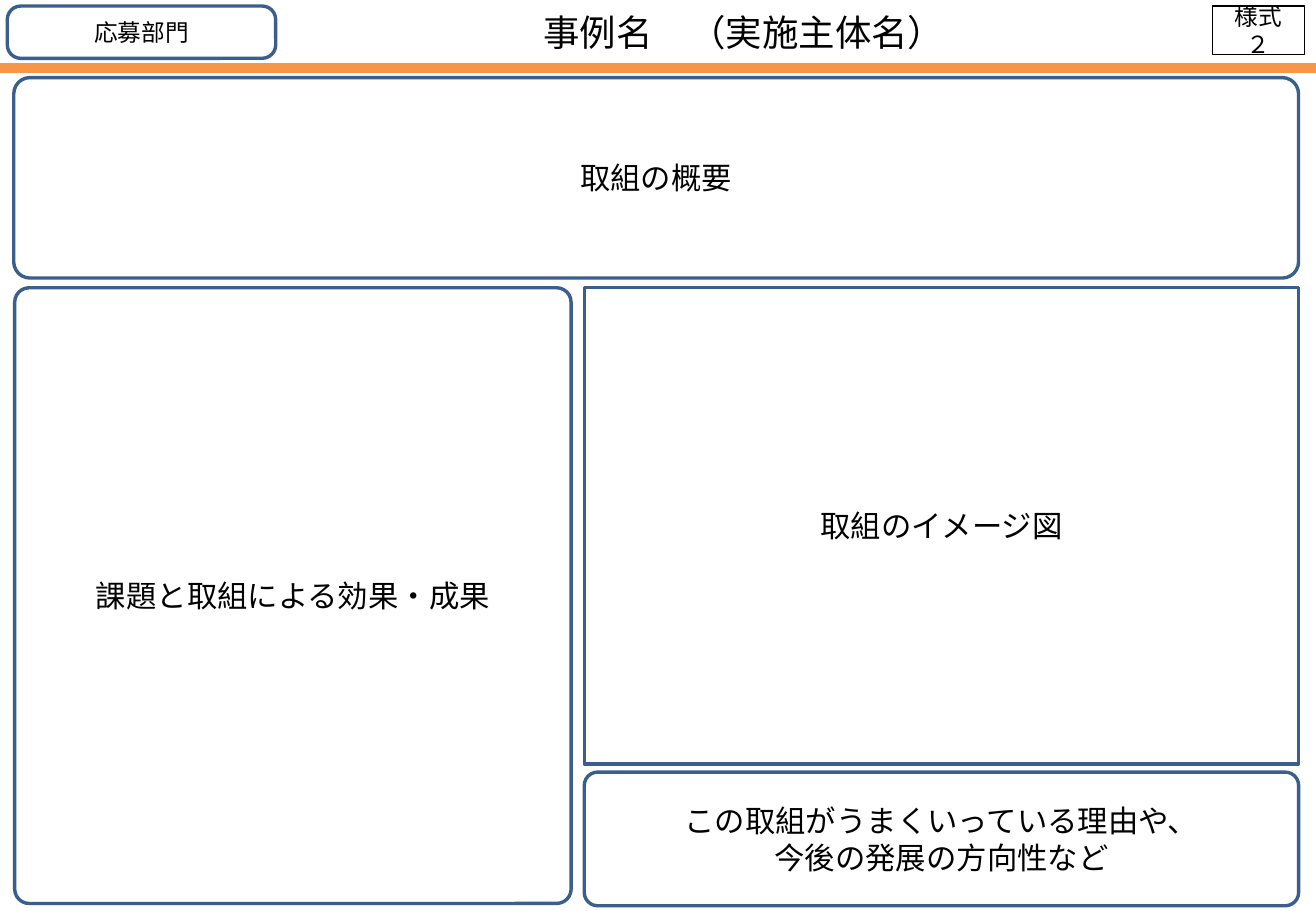
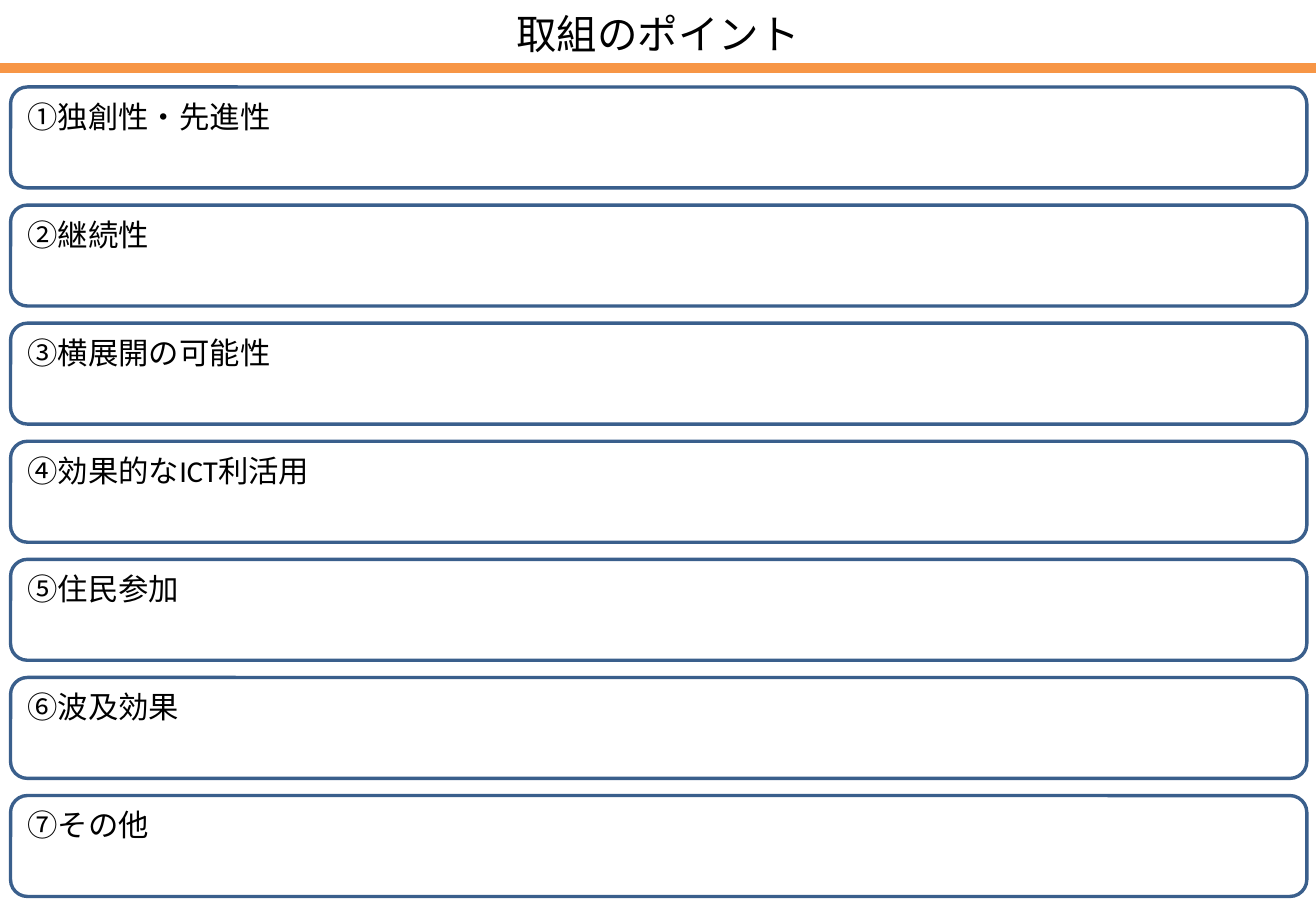
from pptx import Presentation
from pptx.dml.color import RGBColor
from pptx.enum.shapes import MSO_SHAPE as Preset
from pptx.enum.text import MSO_ANCHOR as Anchor, PP_ALIGN as Align
from pptx.util import Pt

PAGE_WIDTH, PAGE_HEIGHT = 780, 540
FONT = "Calibri"
BLACK, BLUE, ORANGE = "000000", "3A5F8C", "F79646"
BAND = (0, 37.4, PAGE_WIDTH, 5.8)

LEFT, RIGHT = 8.2, 769.7
COLUMN = 346.3
ROW = 170.6

CASE_TITLE = ("事例名\u3000（実施主体名）", (157.7, 3.6, 566.6, 30.2), 21.6)
CASE_FRAMES = [
    (["取組の概要"], (LEFT, 46, RIGHT - LEFT, 118.8), 9.6, 18, BLUE, 2),
    (["課題と取組による効果・成果"], (LEFT + 0.5, ROW, 329.8, 365), 8.6, 18, BLUE, 2),
    (["取組のイメージ図"], (COLUMN, ROW, RIGHT - COLUMN, 282.2), 0, 18, BLUE, 2),
    (["この取組がうまくいっている理由や、", "今後の発展の方向性など"],
     (COLUMN, 457.7, RIGHT - COLUMN, 79.2), 7.9, 18, BLUE, 2),
    (["様式２"], (718.6, 3.6, 54.7, 28.8), 0, 14, BLACK, 1),
    (["応募部門"], (4.3, 3.6, 159.1, 31), 8, 14, BLUE, 2),
]

POINTS_TITLE = ("取組のポイント", (39, 3, 702, 33.8), 24)
POINTS = [
    "①独創性・先進性",
    "②継続性",
    "③横展開の可能性",
    "④効果的なICT利活用",
    "⑤住民参加",
    "⑥波及効果",
    "⑦その他",
]
POINTS_TOP, POINT_PITCH, POINT_HEIGHT = 51.6, 70, 59.8
POINT_LEFT, POINT_WIDTH = 6.3, 768.3


def color(value):
    return RGBColor.from_string(value)


def place(area):
    return [Pt(length) for length in area]


def write(box, lines, size, align=Align.CENTER, anchor=Anchor.MIDDLE):
    frame = box.text_frame
    frame.word_wrap = True
    frame.vertical_anchor = anchor
    for number, line in enumerate(lines):
        para = frame.add_paragraph() if number else frame.paragraphs[0]
        para.alignment = align
        span = para.add_run()
        span.text = line
        span.font.name = FONT
        span.font.size = Pt(size)
        span.font.color.rgb = color(BLACK)


def add_frame(page, area, radius, line_color=BLUE, line_width=2):
    preset = Preset.ROUNDED_RECTANGLE if radius else Preset.RECTANGLE
    box = page.shapes.add_shape(preset, *place(area))
    box.shadow.inherit = False
    box.fill.background()
    box.line.color.rgb = color(line_color)
    box.line.width = Pt(line_width)
    if radius:
        box.adjustments[0] = radius / min(area[2:])
    return box


def add_page(deck, title, area, size):
    page = deck.slides.add_slide(deck.slide_layouts[6])
    band = page.shapes.add_shape(Preset.RECTANGLE, *place(BAND))
    band.shadow.inherit = False
    band.fill.solid()
    band.fill.fore_color.rgb = color(ORANGE)
    band.line.fill.background()
    write(page.shapes.add_textbox(*place(area)), [title], size)
    return page


def main():
    deck = Presentation()
    deck.slide_width, deck.slide_height = Pt(PAGE_WIDTH), Pt(PAGE_HEIGHT)

    page = add_page(deck, *CASE_TITLE)
    for lines, area, radius, size, line_color, line_width in CASE_FRAMES:
        write(add_frame(page, area, radius, line_color, line_width), lines, size)

    page = add_page(deck, *POINTS_TITLE)
    for number, point in enumerate(POINTS):
        top = POINTS_TOP + number * POINT_PITCH
        box = add_frame(page, (POINT_LEFT, top, POINT_WIDTH, POINT_HEIGHT), 10)
        write(box, [point], 18, Align.LEFT, Anchor.TOP)

    deck.save("out.pptx")


if __name__ == "__main__":
    main()
